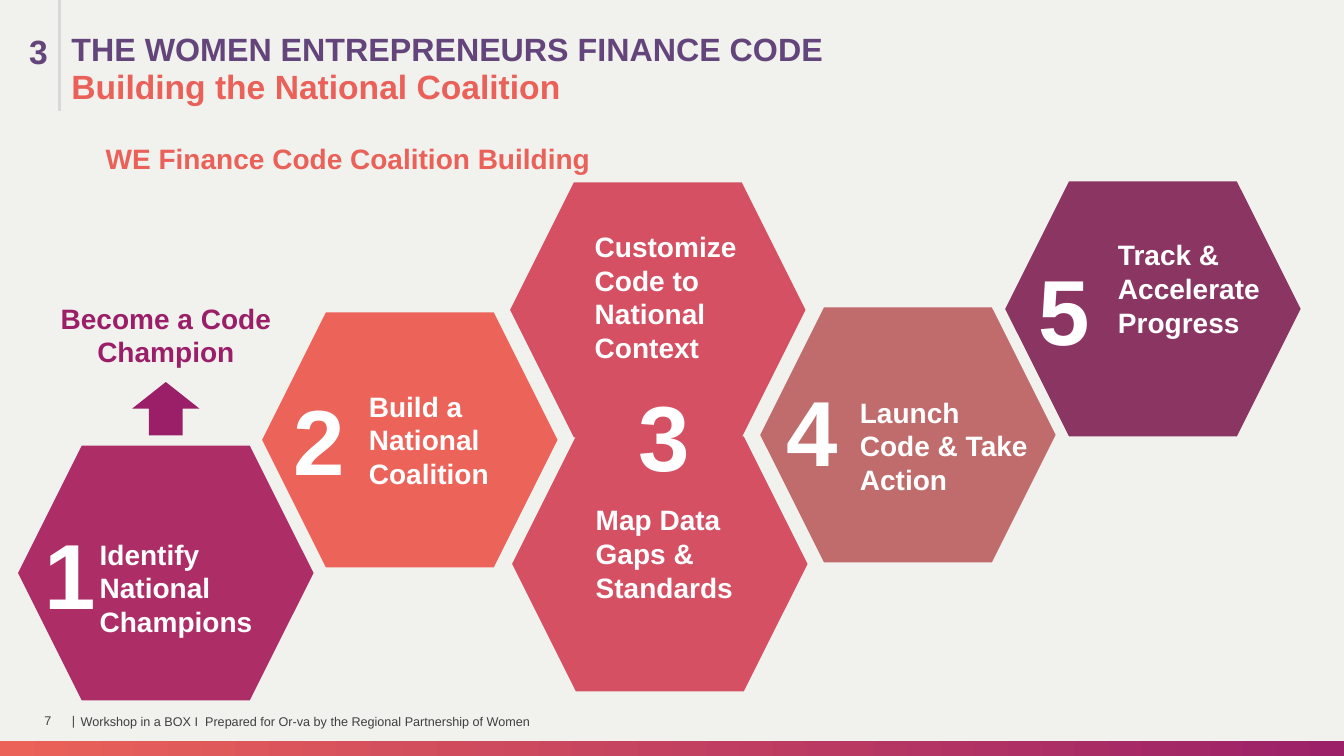
from pptx import Presentation
from pptx.dml.color import RGBColor as RGB
from pptx.enum.shapes import MSO_CONNECTOR as CONN, MSO_SHAPE as SHAPE
from pptx.enum.text import MSO_ANCHOR as ANCHOR, PP_ALIGN as ALIGN
from pptx.oxml.ns import qn
from pptx.util import Inches, Pt
from lxml.etree import SubElement

COLORS = {
    "paper": "F1F1EE", "white": "FFFFFF", "ink": "3F3F3F", "rule": "D8D8D8",
    "violet": "64457B", "coral": "EA6159", "magenta": "9B1F68",
    "bar_left": "EB6258", "bar_right": "9B2068",
    "identify": "AD2D67", "build": "EC6359", "customize": "D55063",
    "launch": "C16C6C", "track": "8B3562",
}
HEX_SIZE = (2.93, 2.53)
NUMBER_SIZE = (0.6, 1.21)

HEXAGONS = [
    (0.18, 4.42, "identify"),
    (2.6, 3.1, "build"),
    (5.06, 1.81, "customize"),
    (7.54, 3.05, "launch"),
    (9.97, 1.8, "track"),
    (5.08, 4.33, "customize"),
]
NUMBERS = [
    ("1", 0.34, 5.08), ("2", 2.81, 3.75), ("3", 6.23, 3.71),
    ("4", 7.7, 3.66), ("5", 10.2, 2.46),
]
LABELS = [
    (["Identify", "National Champions"], (0.2, 5.28, 3.06, 1.11), 0.69),
    (["Build a", "National", "Coalition"], (2.94, 3.81, 3.2, 1.11), 0.62),
    (["Customize Code to National", "Context"], (5.3, 2.23, 2.61, 1.45), 0.5),
    (["Map Data Gaps & Standards"], (5.31, 4.94, 2.61, 1.11), 0.5),
    (["Launch", "Code & Take Action"], (8.43, 3.87, 2.05, 1.11), 0),
    (["Track & Accelerate Progress"], (10.43, 2.31, 2.34, 1.11), 0.56),
]
HEADINGS = [
    ("3", (0, 0.26, 0.9, 0.5), 24, "violet", 0.19),
    ("THE WOMEN ENTREPRENEURS FINANCE CODE", (0.42, 0.24, 12.19, 0.5), 23, "violet", 0.19),
    ("Building the National Coalition", (0.59, 0.6, 11.13, 0.5), 24, "coral", 0.02),
    ("WE Finance Code Coalition Building", (0.95, 1.35, 10.43, 0.44), 20, "coral", 0),
]
FOOTERS = [
    ("7", (0.44, 6.95, 0.22, 0.4), ALIGN.LEFT),
    ("|", (0.68, 6.95, 0.1, 0.4), ALIGN.CENTER),
    ("Workshop in a BOX I  Prepared for Or-va by the Regional Partnership of Women",
     (0.8, 6.96, 5.71, 0.4), ALIGN.LEFT),
]


def rgb(name):
    return RGB.from_string(COLORS[name])


class Deck:
    font = "Arial"

    def __init__(self):
        self.prs = Presentation()
        self.prs.slide_width, self.prs.slide_height = Inches(13.33), Inches(7.5)
        self.s = self.prs.slides.add_slide(self.prs.slide_layouts[6])
        fill = self.s.background.fill
        fill.solid()
        fill.fore_color.rgb = rgb("paper")

    def shape(self, kind, box, color):
        sp = self.s.shapes.add_shape(kind, *map(Inches, box))
        sp.shadow.inherit = False
        sp.line.fill.background()
        sp.fill.solid()
        sp.fill.fore_color.rgb = rgb(color)
        return sp

    def gradient_bar(self, box, left, right):
        sp = self.shape(SHAPE.RECTANGLE, box, left)
        sp.fill.gradient()
        sp.fill.gradient_angle = 0
        for stop, color in zip(sp.fill.gradient_stops, (left, right)):
            stop.color.rgb = rgb(color)

    def line(self, start, end, color, width):
        cx = self.s.shapes.add_connector(CONN.STRAIGHT, *map(Inches, start + end))
        cx.line.color.rgb = rgb(color)
        cx.line.width = Pt(width)
        SubElement(cx._element.spPr, qn("a:effectLst"))

    def text(self, lines, box, size, color, bold=True, align=ALIGN.LEFT, indent=0, frame=None):
        tf = self.s.shapes.add_textbox(*map(Inches, box)).text_frame
        for key, value in {"word_wrap": True, **(frame or {})}.items():
            setattr(tf, key, value)
        for i, line in enumerate(lines):
            p = tf.paragraphs[0] if i == 0 else tf.add_paragraph()
            p.alignment = align
            if indent:
                p._p.get_or_add_pPr().set("marL", str(Inches(indent)))
            r = p.add_run()
            r.text = line
            for key, value in {"name": self.font, "size": Pt(size), "bold": bold}.items():
                setattr(r.font, key, value)
            r.font.color.rgb = rgb(color)

    def footer(self, line, box, align):
        frame = dict.fromkeys(("margin_left", "margin_top", "margin_right", "margin_bottom"), 0)
        frame["vertical_anchor"] = ANCHOR.MIDDLE
        self.text([line], box, 9, "ink", bold=False, align=align, frame=frame)


def main():
    deck = Deck()
    deck.gradient_bar((0, 7.35, 13.33, 0.15), "bar_left", "bar_right")
    for line, box, align in FOOTERS:
        deck.footer(line, box, align)
    deck.line((0.59, 0), (0.59, 1.1), "rule", 2.25)
    for line, box, size, color, indent in HEADINGS:
        deck.text([line], box, size, color, indent=indent)

    deck.shape(SHAPE.UP_ARROW, (1.31, 3.79, 0.67, 0.53), "magenta")
    deck.text(["Become a Code Champion"], (0.18, 2.94, 2.91, 0.77), 20, "magenta",
              align=ALIGN.CENTER, indent=0.02)
    for left, top, color in HEXAGONS:
        deck.shape(SHAPE.HEXAGON, (left, top, *HEX_SIZE), color)
    for number, left, top in NUMBERS:
        deck.text([number], (left, top, *NUMBER_SIZE), 66, "white")
    for lines, box, indent in LABELS:
        deck.text(lines, box, 20, "white", indent=indent)
    deck.prs.save("out.pptx")


if __name__ == "__main__":
    main()
